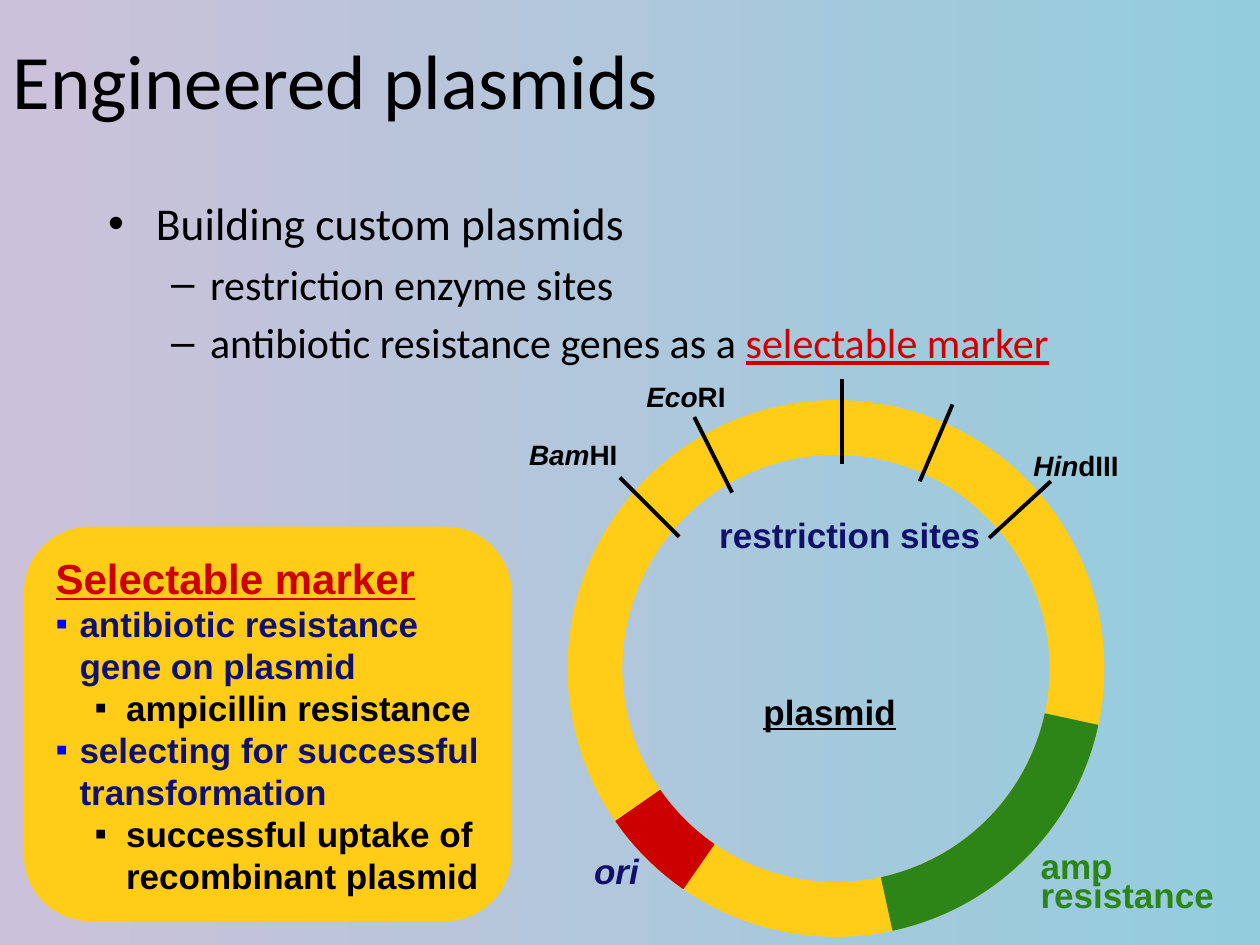
import pptx
import pptx.util
import pptx.dml.color
import pptx.enum.shapes
import pptx.enum.text
import pptx.oxml.ns
import lxml.etree

COLUMNS, ROWS = 100, 75
CELL = pptx.util.Inches(0.1)
BLACK, RED, NAVY, BLUE = "000000", "CC0000", "0F116A", "0000FF"
YELLOW, GREEN = "FFCC18", "2C8516"
RING = (45.1, 31.8, 42.5, 42.5)
RING_WIDTH = 0.1
SHAPE = pptx.enum.shapes.MSO_SHAPE
ALIGN = pptx.enum.text.PP_ALIGN
ANCHOR = pptx.enum.text.MSO_ANCHOR
FIT = pptx.enum.text.MSO_AUTO_SIZE


def rgb(value):
    """Turn a hex string into a colour."""
    return pptx.dml.color.RGBColor.from_string(value)


def grid(*cells):
    """Turn grid columns and rows into slide lengths."""
    return [round(c * CELL) for c in cells]


def add_run(p, text, size, color=BLACK, font="Arial", bold=True, italic=False, underline=False):
    """Add one formatted run to a paragraph."""
    r = p.add_run()
    r.text = text
    r.font.name, r.font.size = font, pptx.util.Pt(size)
    r.font.bold, r.font.italic, r.font.underline = bold, italic, underline
    r.font.color.rgb = rgb(color)


def next_paragraph(tf):
    """Return the first empty paragraph or a new one."""
    p = tf.paragraphs[0]
    return tf.add_paragraph() if p.runs else p


def set_bullet(p, margin, hang, char=None, color=BLACK):
    """Give a paragraph a hanging indent and an optional bullet."""
    pPr = p._p.get_or_add_pPr()
    pPr.set("marL", str(pptx.util.Inches(margin)))
    pPr.set("indent", str(-pptx.util.Inches(hang)))
    if char:
        qn = pptx.oxml.ns.qn
        buClr = lxml.etree.SubElement(pPr, qn("a:buClr"))
        lxml.etree.SubElement(buClr, qn("a:srgbClr"), val=color)
        lxml.etree.SubElement(pPr, qn("a:buFont"), typeface="Arial")
        lxml.etree.SubElement(pPr, qn("a:buChar"), char=char)


def set_background(s, start, end):
    """Fill the background with a left-to-right gradient."""
    fill = s.background.fill
    fill.gradient()
    fill.gradient_angle = 0
    for stop, color in zip(fill.gradient_stops, (start, end)):
        stop.color.rgb = rgb(color)


def set_title(s, text):
    """Place and format the title."""
    sp = s.shapes.title
    sp.left, sp.top, sp.width, sp.height = grid(0, 0, 90, 12.5)
    tf = sp.text_frame
    tf.vertical_anchor = ANCHOR.MIDDLE
    p = tf.paragraphs[0]
    p.alignment = ALIGN.LEFT
    add_run(p, text, 44, font="Calibri", bold=False)


def add_outline(s):
    """Add the bulleted outline under the title."""
    tf = s.shapes.add_textbox(*grid(7.6, 15, 92.4, 18.7)).text_frame
    tf.word_wrap = True
    items = [
        (0, [("Building custom plasmids", BLACK)]),
        (1, [("restriction enzyme sites", BLACK)]),
        (1, [("antibiotic resistance genes as a ", BLACK), ("selectable marker", RED)]),
    ]
    for level, runs in items:
        p = next_paragraph(tf)
        p.level = level
        size, margin, hang, char = [(26, 0.38, 0.38, "•"), (24, 0.81, 0.31, "–")][level]
        p.space_before = pptx.util.Pt(size * 0.2)
        set_bullet(p, margin, hang, char)
        for text, color in runs:
            add_run(p, text, size, color, "Calibri", bold=False, underline=color == RED)


def add_filled(s, kind, box, color, adjustments):
    """Add a preset shape in one flat colour."""
    sp = s.shapes.add_shape(kind, *grid(*box))
    sp.shadow.inherit = False
    sp.fill.solid()
    sp.fill.fore_color.rgb = rgb(color)
    for i, value in enumerate(adjustments):
        sp.adjustments[i] = value
    return sp


def add_ring_part(s, kind, color, adjustments):
    """Add the plasmid ring or a segment of it."""
    sp = add_filled(s, kind, RING, color, adjustments)
    sp.line.color.rgb = rgb(color)
    sp.line.width = pptx.util.Pt(0.75)


def add_gene(s, start, end, color):
    """Add a gene on the ring between two clockwise angles in degrees."""
    add_ring_part(s, SHAPE.BLOCK_ARC, color, [start * 0.6, end * 0.6, RING_WIDTH])


def add_card(s):
    """Add the rounded card that explains the selectable marker."""
    sp = add_filled(s, SHAPE.ROUNDED_RECTANGLE, (1.9, 41.8, 38.7, 31.3), YELLOW, [0.167])
    sp.line.fill.background()
    tf = sp.text_frame
    tf.word_wrap = True
    tf.margin_right = pptx.util.Inches(0.02)
    tf.vertical_anchor = ANCHOR.TOP
    p = tf.paragraphs[0]
    p.alignment = ALIGN.LEFT
    set_bullet(p, 0.19, 0.19)
    add_run(p, "Selectable marker", 24, RED, underline=True)
    items = [
        (0, "antibiotic resistance gene on plasmid"),
        (1, "ampicillin resistance"),
        (0, "selecting for successful transformation"),
        (1, "successful uptake of recombinant plasmid"),
    ]
    for level, text in items:
        p = next_paragraph(tf)
        p.level = level
        p.alignment = ALIGN.LEFT
        margin, hang, bullet, color = [(0.19, 0.19, BLUE, NAVY), (0.56, 0.25, BLACK, BLACK)][level]
        set_bullet(p, margin, hang, "▪", bullet)
        add_run(p, text, 20, color)


def add_label(s, box, align=ALIGN.CENTER):
    """Add an unwrapped label box and return its paragraph."""
    tf = s.shapes.add_textbox(*grid(*box)).text_frame
    tf.word_wrap = False
    tf.auto_size = FIT.SHAPE_TO_FIT_TEXT
    tf.vertical_anchor = ANCHOR.MIDDLE
    p = tf.paragraphs[0]
    p.alignment = align
    return p


def add_site(s, ends):
    """Add the line that marks a restriction site."""
    line = s.shapes.add_connector(pptx.enum.shapes.MSO_CONNECTOR.STRAIGHT, *grid(*ends))
    line.line.color.rgb = rgb(BLACK)
    line.line.width = pptx.util.Pt(2.25)
    spPr = line._element.spPr
    lxml.etree.SubElement(spPr, pptx.oxml.ns.qn("a:effectLst"))


def main():
    """Build the slide and save it."""
    prs = pptx.Presentation()
    prs.slide_width, prs.slide_height = grid(COLUMNS, ROWS)
    s = prs.slides.add_slide(prs.slide_layouts[5])
    set_background(s, "CCC1DA", "93CDDD")
    set_title(s, "Engineered plasmids")
    add_card(s)
    add_ring_part(s, SHAPE.DONUT, YELLOW, [RING_WIDTH])
    add_gene(s, 12.3, 77.7, GREEN)
    add_gene(s, 124.8, 145.2, RED)
    for ends in [(66.8, 30.1, 66.8, 36.8), (75.6, 32.1, 73, 38.2), (83.4, 38.2, 78.5, 42.7),
                 (55.1, 33.1, 58.1, 39.1), (49.2, 37.9, 53.9, 42.6)]:
        add_site(s, ends)
    for box, genus, strain in [((50.3, 29.6, 8.3, 3.7), "Eco", "RI"),
                               ((41, 34.2, 9, 3.7), "Bam", "HI"),
                               ((81, 35.1, 8.8, 3.7), "Hin", "dIII")]:
        p = add_label(s, box)
        add_run(p, genus, 16, italic=True)
        add_run(p, strain, 16)
    add_run(add_label(s, (59.6, 54.3, 12.5, 4.3)), "plasmid", 20, underline=True)
    add_run(add_label(s, (56.1, 40.3, 22.7, 4.3), ALIGN.RIGHT), "restriction sites", 20, NAVY)
    add_run(add_label(s, (46.1, 66.9, 5.6, 4.3), ALIGN.RIGHT), "ori", 20, NAVY, italic=True)
    p = add_label(s, (81.6, 67.4, 15.8, 5.7), ALIGN.LEFT)
    p.line_spacing = 0.7
    add_run(p, "amp", 20, GREEN)
    p.add_line_break()
    add_run(p, "resistance", 20, GREEN)
    add_outline(s)
    prs.save("out.pptx")


if __name__ == "__main__":
    main()
